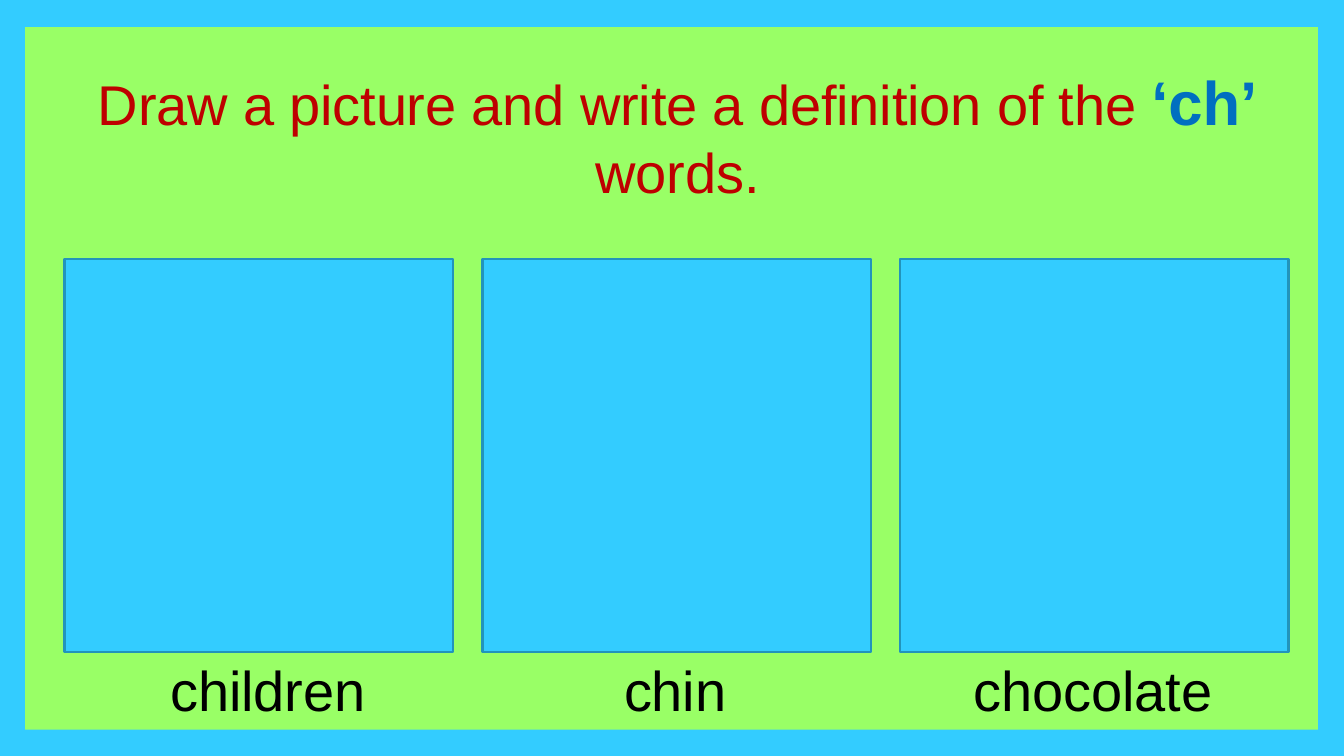
from pptx import Presentation, util as u
from pptx.dml.color import RGBColor
from pptx.enum import shapes, text

PX = 9144  # EMU per px, 100 px to the inch
SKY, LIME, EDGE = "33CCFF", "99FF66", "2294BB"
RED, BLUE, BLACK = "BE0000", "006FC0", "000000"
FRAME_LEFT, FRAME_TOP, FRAME_WIDTH, FRAME_HEIGHT = 64, 257, 385, 390
FRAME_STEP = 414.5
LABEL_TOP, LABEL_HEIGHT = 649, 69
# word, left and width of its label
LABELS = [("children", 168, 197), ("chin", 618, 105), ("chocolate", 965, 240)]


def px(*lengths):
    return [u.Emu(round(length * PX)) for length in lengths]


def colour(code):
    return RGBColor.from_string(code)


def add_panel(page, bounds, fill, line=None):
    panel = page.shapes.add_shape(shapes.MSO_SHAPE.RECTANGLE, *px(*bounds))
    panel.shadow.inherit = False
    panel.fill.solid()
    panel.fill.fore_color.rgb = colour(fill)
    if line:
        panel.line.color.rgb = colour(line)
        panel.line.width = u.Pt(1.56)
    else:
        panel.line.fill.background()


def add_box(page, bounds, inset, wrap=True):
    """Add an empty text box and return its frame."""
    frame = page.shapes.add_textbox(*px(*bounds)).text_frame
    frame.word_wrap = wrap
    frame.margin_left, frame.margin_top = px(inset, 1)
    frame.margin_right = frame.margin_bottom = 0
    return frame


def format_para(para, before, align=text.PP_ALIGN.LEFT):
    para.alignment = align
    para.space_before = u.Pt(before)


def add_span(para, words, size=40, color=BLACK, bold=False, spacing=-10):
    """Add a run; spacing is in hundredths of a point."""
    span = para.add_run()
    span.text = words
    span.font.name = "Arial"
    span.font.size = u.Pt(size)
    span.font.bold = bold
    span.font.color.rgb = colour(color)
    span._r.get_or_add_rPr().set("spc", str(spacing))


def add_title(page):
    frame = add_box(page, (80, 62, 1173, 143), inset=11)
    first, second = frame.paragraphs[0], frame.add_paragraph()
    format_para(first, 1.1, text.PP_ALIGN.CENTER)
    add_span(first, "Draw a picture and write a definition of the ", color=RED)
    add_span(first, "‘ch’", size=44, color=BLUE, bold=True)
    format_para(second, 0.1, text.PP_ALIGN.CENTER)
    add_span(second, "words.", color=RED)


def add_label(page, word, left, width):
    bounds = (left, LABEL_TOP, width, LABEL_HEIGHT)
    para = add_box(page, bounds, inset=1, wrap=False).paragraphs[0]
    format_para(para, 0.9)
    add_span(para, word)


def main():
    deck = Presentation()
    deck.slide_width, deck.slide_height = px(1333, 750)
    page = deck.slides.add_slide(deck.slide_layouts[6])
    add_panel(page, (0, 0, 1333, 750), SKY)
    add_panel(page, (25, 27, 1282, 697), LIME)
    add_title(page)
    for index, (word, left, width) in enumerate(LABELS):
        frame_left = FRAME_LEFT + index * FRAME_STEP
        add_panel(page, (frame_left, FRAME_TOP, FRAME_WIDTH, FRAME_HEIGHT), SKY, EDGE)
        add_label(page, word, left, width)
    deck.save("out.pptx")


if __name__ == "__main__":
    main()
